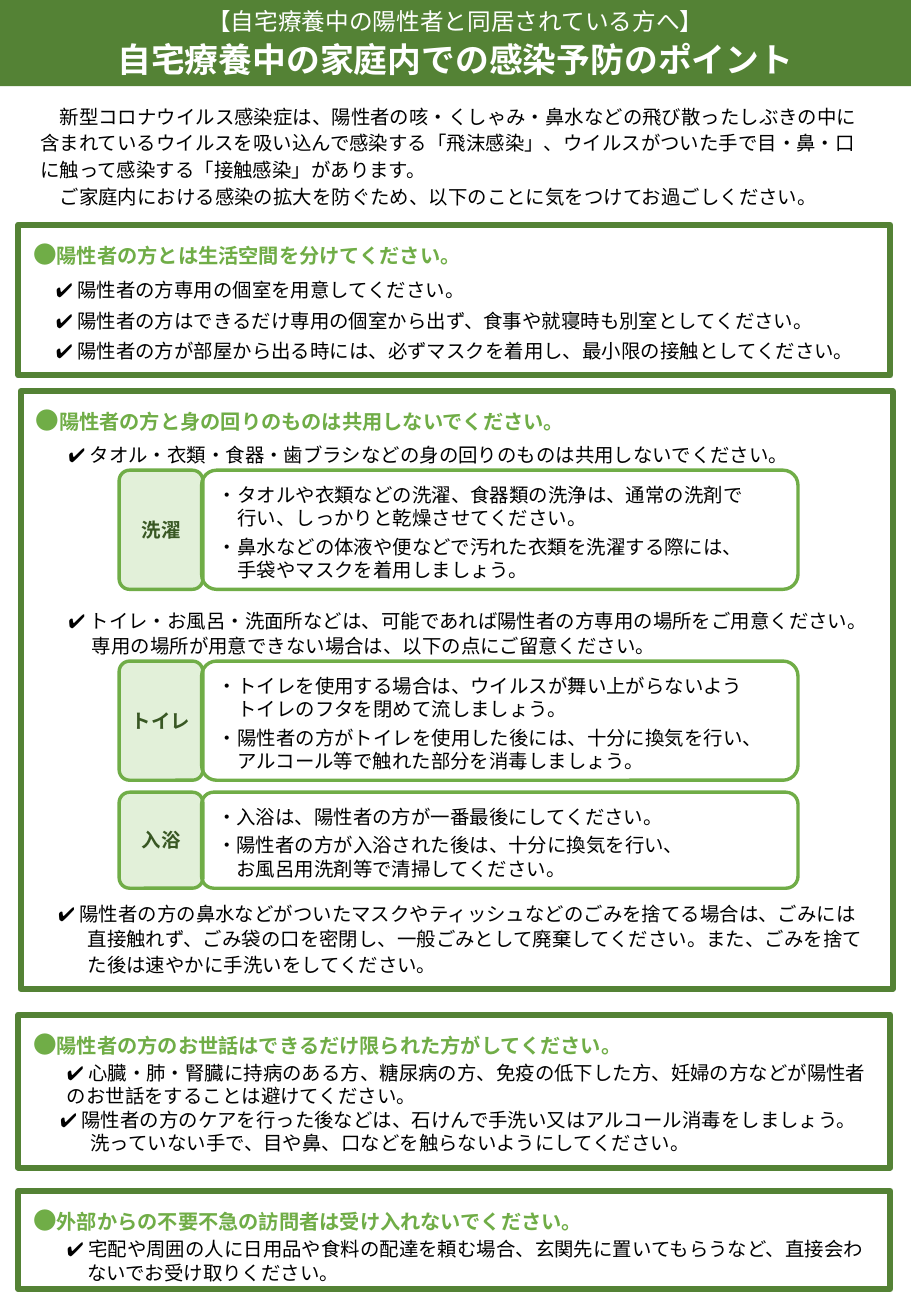
from copy import deepcopy
from dataclasses import dataclass

from lxml import etree
from pptx import Presentation
from pptx import util as u
from pptx.dml.color import RGBColor
from pptx.enum import shapes, text
from pptx.oxml.ns import qn


@dataclass(frozen=True)
class Theme:
    font: str = "Noto Sans CJK JP"
    dark: str = "548235"
    bright: str = "70AD47"
    pale: str = "E2F0D9"
    label: str = "385723"
    white: str = "FFFFFF"
    black: str = "000000"
    title: float = 20
    dot: float = 14
    heading: float = 12
    body: float = 11.5


THEME = Theme()


@dataclass(frozen=True)
class Item:
    words: str
    left: float = 0      # indent of the first line
    hang: float = 0      # further indent of the lines below it
    before: float = 0
    spacing: float = 13.8


@dataclass(frozen=True)
class Panel:
    left: float
    top: float
    height: float
    heading: str
    items: tuple[Item, ...]


@dataclass(frozen=True)
class Room:
    label: str
    top: float
    height: float
    advice: tuple[str, ...]


# Content
TITLE = ("【自宅療養中の陽性者と同居されている方へ】", "自宅療養中の家庭内での感染予防のポイント")
INTRO = (
    "新型コロナウイルス感染症は、陽性者の咳・くしゃみ・鼻水などの飛び散ったしぶきの中に"
    "含まれているウイルスを吸い込んで感染する「飛沫感染」、ウイルスがついた手で目・鼻・口"
    "に触って感染する「接触感染」があります。",
    "ご家庭内における感染の拡大を防ぐため、以下のことに気をつけてお過ごしください。",
)
PANELS = (
    Panel(10.8, 133.2, 89.3, "陽性者の方とは生活空間を分けてください。", tuple(
        Item(words, left=16.5, spacing=18) for words in (
            "✔ 陽性者の方専用の個室を用意してください。",
            "✔ 陽性者の方はできるだけ専用の個室から出ず、食事や就寝時も別室としてください。",
            "✔ 陽性者の方が部屋から出る時には、必ずマスクを着用し、最小限の接触としてください。",
        ))),
    Panel(12.2, 231.8, 354.2, "陽性者の方と身の回りのものは共用しないでください。", (
        Item("✔ タオル・衣類・食器・歯ブラシなどの身の回りのものは共用しないでください。",
             left=22.5, spacing=17),
        Item("✔ トイレ・お風呂・洗面所などは、可能であれば陽性者の方専用の場所をご用意ください。\n"
             "専用の場所が用意できない場合は、以下の点にご留意ください。",
             left=22.5, hang=14, before=83, spacing=15),
        Item("✔ 陽性者の方の鼻水などがついたマスクやティッシュなどのごみを捨てる場合は、ごみには\n"
             "直接触れず、ごみ袋の口を密閉し、一般ごみとして廃棄してください。また、ごみを捨て\n"
             "た後は速やかに手洗いをしてください。",
             left=16.5, hang=17.5, before=144, spacing=15),
    )),
    Panel(10.8, 601.2, 90.7, "陽性者の方のお世話はできるだけ限られた方がしてください。", (
        Item("✔ 心臓・肺・腎臓に持病のある方、糖尿病の方、免疫の低下した方、妊婦の方などが陽性者\n"
             "のお世話をすることは避けてください。", left=23),
        Item("✔ 陽性者の方のケアを行った後などは、石けんで手洗い又はアルコール消毒をしましょう。\n"
             "洗っていない手で、目や鼻、口などを触らないようにしてください。", left=19, hang=18),
    )),
    Panel(10.8, 705.6, 58.3, "外部からの不要不急の訪問者は受け入れないでください。", (
        Item("✔ 宅配や周囲の人に日用品や食料の配達を頼む場合、玄関先に置いてもらうなど、直接会わ\n"
             "ないでお受け取りください。", left=23, hang=12),
    )),
)
ROOMS = (
    Room("洗濯", 278.6, 70.6, (
        "・タオルや衣類などの洗濯、食器類の洗浄は、通常の洗剤で\n行い、しっかりと乾燥させてください。",
        "・鼻水などの体液や便などで汚れた衣類を洗濯する際には、\n手袋やマスクを着用しましょう。")),
    Room("トイレ", 391.7, 70.6, (
        "・トイレを使用する場合は、ウイルスが舞い上がらないよう\nトイレのフタを閉めて流しましょう。",
        "・陽性者の方がトイレを使用した後には、十分に換気を行い、\nアルコール等で触れた部分を消毒しましょう。")),
    Room("入浴", 469.4, 56.9, (
        "・入浴は、陽性者の方が一番最後にしてください。",
        "・陽性者の方が入浴された後は、十分に換気を行い、\nお風呂用洗剤等で清掃してください。")),
)


# Text helpers
def write(paragraph, words: str, *, size: float = THEME.body,
          color: str = THEME.black, bold: bool = False) -> None:
    for number, line in enumerate(words.split("\n")):
        if number:
            paragraph.add_line_break()
        run = paragraph.add_run()
        run.text = line
        run.font.size = u.Pt(size)
        run.font.bold = bold
        run.font.color.rgb = RGBColor.from_string(color)
        run.font.name = THEME.font
        properties = run.font._element
        etree.SubElement(properties, qn("a:ea"), typeface=THEME.font)
    for line_break in paragraph._p.findall(qn("a:br")):
        line_break.append(deepcopy(properties))


def next_paragraph(frame, *, spacing: float, left: float = 0, hang: float = 0,
                   before: float = 0, after: float = 0, align=text.PP_ALIGN.LEFT):
    first = frame.paragraphs[0]
    paragraph = frame.add_paragraph() if first.runs else first
    paragraph.alignment = align
    paragraph.line_spacing = u.Pt(spacing)
    paragraph.space_before = u.Pt(before)
    paragraph.space_after = u.Pt(after)
    properties = paragraph._p.get_or_add_pPr()
    properties.set("marL", str(u.Pt(left + hang)))
    properties.set("indent", str(u.Pt(-hang)))
    return paragraph


def write_items(frame, items: tuple[Item, ...]) -> None:
    for item in items:
        paragraph = next_paragraph(frame, spacing=item.spacing, left=item.left,
                                   hang=item.hang, before=item.before)
        write(paragraph, item.words)


def set_frame(shape, margins: tuple[float, ...], anchor=text.MSO_ANCHOR.TOP):
    frame = shape.text_frame
    frame.word_wrap = True
    frame.auto_size = text.MSO_AUTO_SIZE.NONE
    frame.vertical_anchor = anchor
    (frame.margin_left, frame.margin_top,
     frame.margin_right, frame.margin_bottom) = map(u.Pt, margins)
    return frame


# Shapes
def add_box(slide, kind, box: tuple[float, ...], *, fill: str | None, line: str, width: float):
    shape = slide.shapes.add_shape(kind, *map(u.Pt, box))
    shape.shadow.inherit = False
    if fill:
        shape.fill.solid()
        shape.fill.fore_color.rgb = RGBColor.from_string(fill)
    else:
        shape.fill.background()
    shape.line.color.rgb = RGBColor.from_string(line)
    shape.line.width = u.Pt(width)
    return shape


def add_title(slide) -> None:
    title = slide.shapes.title
    title.left, title.top, title.width, title.height = map(u.Pt, (0, 0, 540, 51.1))
    title.fill.solid()
    title.fill.fore_color.rgb = RGBColor.from_string(THEME.dark)
    frame = set_frame(title, (0, 2.9, 0, 0), text.MSO_ANCHOR.MIDDLE)
    center = text.PP_ALIGN.CENTER
    write(next_paragraph(frame, spacing=14, align=center), TITLE[0],
          size=THEME.dot, color=THEME.white)
    write(next_paragraph(frame, spacing=24, before=2, align=center), TITLE[1],
          size=THEME.title, color=THEME.white, bold=True)


def add_intro(slide) -> None:
    shape = slide.shapes.add_textbox(*map(u.Pt, (18, 56.9, 505.4, 70.6)))
    frame = set_frame(shape, (5.8, 2.9, 5.8, 2.9))
    write_items(frame, tuple(Item(words, left=THEME.body, hang=-THEME.body, spacing=16)
                             for words in INTRO))


def add_panel(slide, panel: Panel) -> None:
    shape = add_box(slide, shapes.MSO_SHAPE.RECTANGLE, (panel.left, panel.top, 517, panel.height),
                    fill=THEME.white, line=THEME.dark, width=3.5)
    frame = set_frame(shape, (5.8, 8.6, 5.8, 2.9))
    heading = next_paragraph(frame, spacing=17, left=3, after=2)
    write(heading, "●", size=THEME.dot, color=THEME.bright, bold=True)
    write(heading, panel.heading, size=THEME.heading, color=THEME.bright, bold=True)
    write_items(frame, panel.items)


def add_room(slide, room: Room) -> None:
    rounded, middle = shapes.MSO_SHAPE.ROUNDED_RECTANGLE, text.MSO_ANCHOR.MIDDLE
    label = add_box(slide, rounded, (70.6, room.top, 49.7, room.height),
                    fill=THEME.pale, line=THEME.bright, width=2)
    advice = add_box(slide, rounded, (119.5, room.top, 353.5, room.height),
                     fill=None, line=THEME.bright, width=2)
    for shape in (label, advice):
        shape.adjustments[0] = 0.125
    paragraph = next_paragraph(set_frame(label, (2.9, 3.6, 2.9, 3.6), middle),
                               spacing=13.8, align=text.PP_ALIGN.CENTER)
    write(paragraph, room.label, color=THEME.label, bold=True)
    write_items(set_frame(advice, (7.2, 2.9, 7.2, 0), middle),
                tuple(Item(words, hang=THEME.body, before=3 if number else 0)
                      for number, words in enumerate(room.advice)))


def main() -> None:
    presentation = Presentation()
    presentation.slide_width, presentation.slide_height = u.Pt(540), u.Pt(779.76)
    slide = presentation.slides.add_slide(presentation.slide_layouts[5])
    add_title(slide)
    add_intro(slide)
    for panel in PANELS:
        add_panel(slide, panel)
    for room in ROOMS:
        add_room(slide, room)
    presentation.save("out.pptx")


if __name__ == "__main__":
    main()
